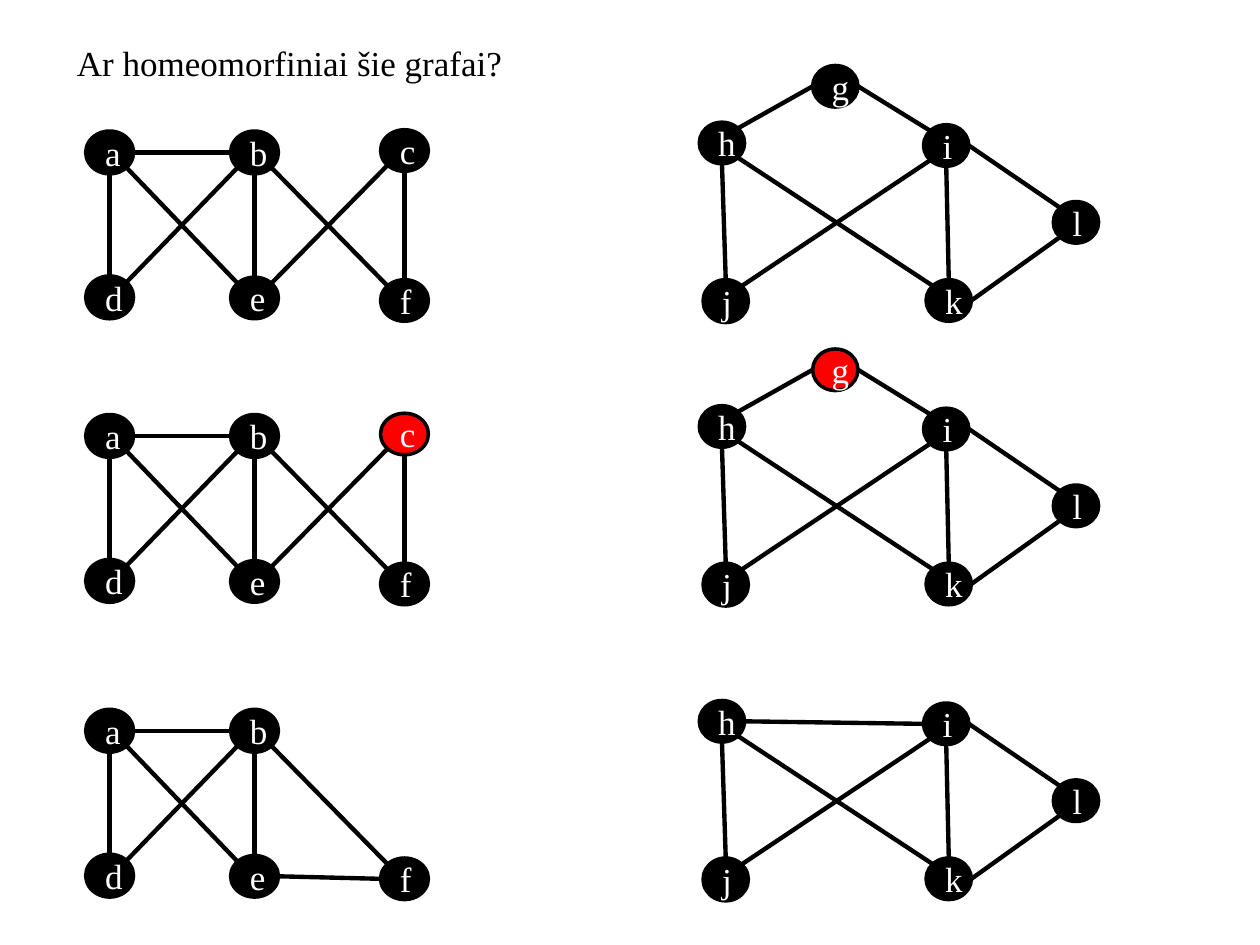
"""Build a slide asking whether pairs of graphs are homeomorphic."""
from typing import Any, NamedTuple

from pptx import Presentation
from pptx import util as u
from pptx.dml import color
from pptx.enum import shapes, text
from pptx.oxml import ns
from lxml import etree

BLACK, WHITE, RED = "000000", "FFFFFF", "FF0000"
SIDES = {
    "n": (0.5, 0), "ne": (0.854, 0.146), "e": (1, 0.5), "se": (0.854, 0.854),
    "s": (0.5, 1), "sw": (0.146, 0.854), "w": (0, 0.5), "nw": (0.146, 0.146),
}


class Vertex(NamedTuple):
    left: float
    top: float
    height: float = 0.33


class Edge(NamedTuple):
    start: str
    start_side: str
    end: str
    end_side: str


class Graph(NamedTuple):
    vertices: dict[str, Vertex]
    edges: list[Edge]
    diameter: float


class Drawing(NamedTuple):
    graph: Graph
    drop: float
    marked: str = ""
    removed: str = ""
    added: tuple[Edge, ...] = ()


LEFT_GRAPH = Graph(
    {"a": Vertex(0.68, 1.04, 0.34), "b": Vertex(1.83, 1.04, 0.34), "c": Vertex(3.02, 1.03),
     "d": Vertex(0.68, 2.19, 0.34), "e": Vertex(1.83, 2.2), "f": Vertex(3.02, 2.22)},
    [Edge("a", "e", "b", "w"), Edge("a", "s", "d", "n"), Edge("a", "se", "e", "nw"),
     Edge("b", "sw", "d", "ne"), Edge("b", "s", "e", "n"), Edge("b", "se", "f", "nw"),
     Edge("c", "sw", "e", "ne"), Edge("c", "s", "f", "n")],
    0.38,
)
RIGHT_GRAPH = Graph(
    {"g": Vertex(6.45, 0.52), "h": Vertex(5.55, 0.97), "i": Vertex(7.33, 0.99),
     "j": Vertex(5.58, 2.22, 0.34), "k": Vertex(7.35, 2.22), "l": Vertex(8.36, 1.6)},
    [Edge("h", "ne", "g", "w"), Edge("g", "e", "i", "nw"), Edge("h", "s", "j", "n"),
     Edge("h", "se", "k", "nw"), Edge("i", "sw", "j", "ne"), Edge("i", "s", "k", "n"),
     Edge("i", "e", "l", "nw"), Edge("k", "e", "l", "sw")],
    0.36,
)
SECOND_ROW, THIRD_ROW = 2.25, 4.59
DRAWINGS = [
    Drawing(LEFT_GRAPH, 0),
    Drawing(RIGHT_GRAPH, 0),
    Drawing(LEFT_GRAPH, SECOND_ROW, marked="c"),
    Drawing(RIGHT_GRAPH, SECOND_ROW, marked="g"),
    Drawing(LEFT_GRAPH, THIRD_ROW, removed="c", added=(Edge("f", "w", "e", "e"),)),
    Drawing(RIGHT_GRAPH, THIRD_ROW, removed="g", added=(Edge("h", "e", "i", "w"),)),
]


def rgb(value: str) -> color.RGBColor:
    return color.RGBColor.from_string(value)


def set_all(target: Any, values: dict[str, Any]) -> None:
    for name, value in values.items():
        setattr(target, name, value)


def write(frame: Any, wording: str, ink: str, align: Any, frame_format: dict[str, Any]) -> None:
    set_all(frame, {"text": wording, "word_wrap": True, **frame_format})
    paragraph = frame.paragraphs[0]
    paragraph.alignment = align
    font = paragraph.runs[0].font
    set_all(font, {"name": "Times New Roman", "size": u.Pt(20)})
    font.color.rgb = rgb(ink)


def draw_edge(group: Any, edge: Edge, drawing: Drawing) -> None:
    ends = []
    for label, side in ((edge.start, edge.start_side), (edge.end, edge.end_side)):
        vertex, (across, down) = drawing.graph.vertices[label], SIDES[side]
        ends += [u.Inches(vertex.left + across * drawing.graph.diameter),
                 u.Inches(vertex.top + drawing.drop + down * vertex.height)]
    connector = group.shapes.add_connector(shapes.MSO_CONNECTOR.STRAIGHT, *ends)
    connector.line.color.rgb = rgb(BLACK)
    connector.line.width = u.Pt(2.5)
    etree.SubElement(connector._element.spPr, ns.qn("a:effectLst"))


def draw_vertex(group: Any, label: str, drawing: Drawing) -> None:
    vertex = drawing.graph.vertices[label]
    disc = group.shapes.add_shape(
        shapes.MSO_SHAPE.OVAL, u.Inches(vertex.left), u.Inches(vertex.top + drawing.drop),
        u.Inches(drawing.graph.diameter), u.Inches(vertex.height))
    disc.shadow.inherit = False
    disc.fill.solid()
    disc.fill.fore_color.rgb = rgb(RED if label == drawing.marked else BLACK)
    disc.line.color.rgb = rgb(BLACK)
    disc.line.width = u.Pt(2)
    write(disc.text_frame, label, WHITE, text.PP_ALIGN.CENTER,
          {"vertical_anchor": text.MSO_ANCHOR.MIDDLE})


def draw_graph(slide: Any, drawing: Drawing) -> None:
    group = slide.shapes.add_group_shape()
    for edge in (*drawing.graph.edges, *drawing.added):
        if drawing.removed not in (edge.start, edge.end):
            draw_edge(group, edge, drawing)
    for label in drawing.graph.vertices:
        if label != drawing.removed:
            draw_vertex(group, label, drawing)


def main() -> None:
    deck = Presentation()
    set_all(deck, {"slide_width": u.Inches(10), "slide_height": u.Inches(7.5)})
    slide = deck.slides.add_slide(deck.slide_layouts[5])
    question = slide.shapes.title
    set_all(question, {"left": u.Inches(0.51), "top": u.Inches(0.28),
                       "width": u.Inches(7.48), "height": u.Inches(0.44)})
    write(question.text_frame, "Ar homeomorfiniai šie grafai?", BLACK, text.PP_ALIGN.LEFT,
          {"vertical_anchor": text.MSO_ANCHOR.TOP,
           "auto_size": text.MSO_AUTO_SIZE.SHAPE_TO_FIT_TEXT})
    for drawing in DRAWINGS:
        draw_graph(slide, drawing)
    deck.save("out.pptx")


if __name__ == "__main__":
    main()
